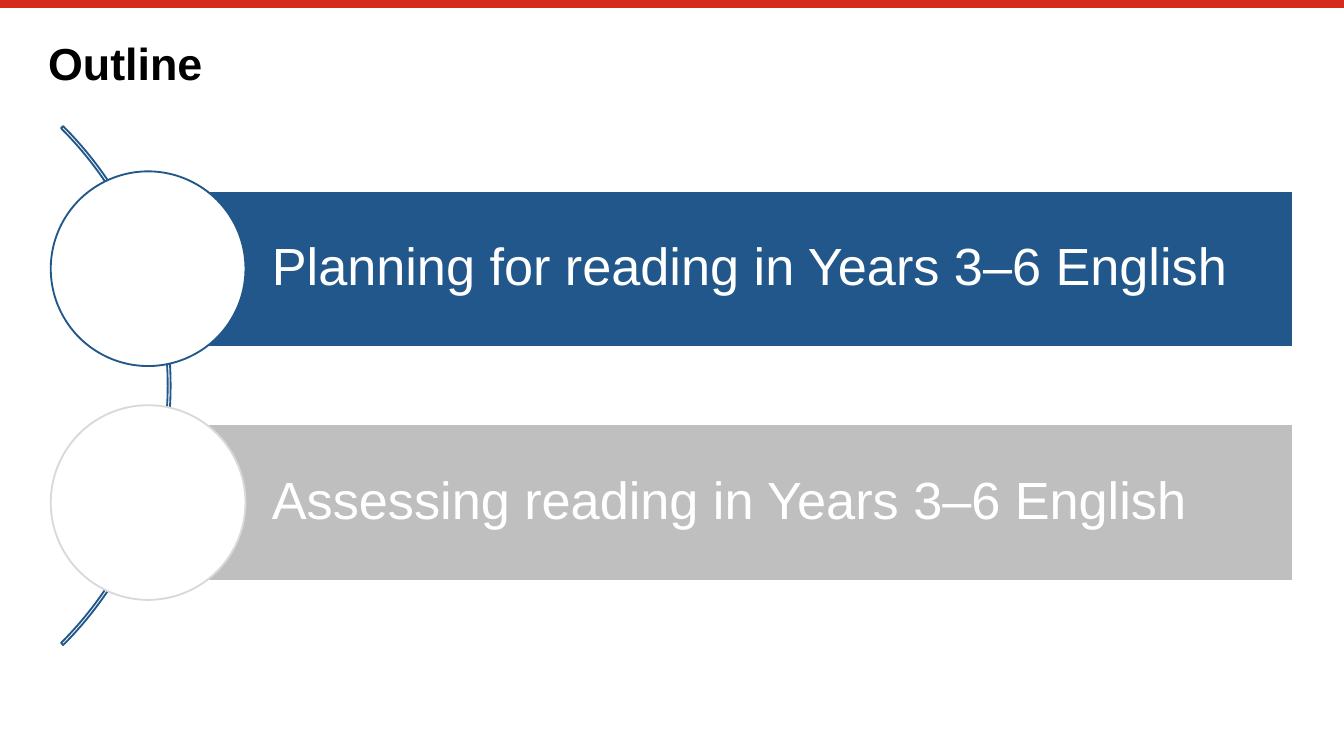
from dataclasses import dataclass

from lxml.etree import SubElement
from pptx import Presentation
from pptx.dml.color import RGBColor
from pptx.enum.shapes import MSO_CONNECTOR, MSO_SHAPE
from pptx.enum.text import MSO_ANCHOR, MSO_AUTO_SIZE, PP_ALIGN
from pptx.oxml.ns import qn
from pptx.util import Cm, Pt

TITLE = "Outline"
# Text, bar colour, circle outline colour
TOPICS = [
    ("Planning for reading in Years 3–6 English", "21578A", "21578A"),
    ("Assessing reading in Years 3–6 English", "BFBFBF", "D9D9D9"),
]


@dataclass(frozen=True)
class Theme:
    font: str = "Arial"
    title_size: int = 24
    topic_size: int = 28
    black: str = "000000"
    white: str = "FFFFFF"
    blue: str = "21578A"
    red: str = "D52B1E"
    outline_width: float = 1
    rule_width: float = 4.2


THEME = Theme()

# Layout in centimetres
SLIDE_WIDTH, SLIDE_HEIGHT = 25.4, 14.29
RULE_Y = 0.08
BAR_LEFT, BAR_WIDTH, BAR_HEIGHT = 2.8, 21.64, 2.95
CIRCLE_SIZE = 3.68
ARC_CENTRE_X, ARC_SIZE = -3.71, 13.87
CENTRE_Y, TOPIC_PITCH = 7.29, 4.42


def add_outlined(slide, kind, centre_x, centre_y, width, height, fill, line):
    """Add a preset shape around its centre; a fill of None leaves it open."""
    shape = slide.shapes.add_shape(
        kind, Cm(centre_x - width / 2), Cm(centre_y - height / 2), Cm(width), Cm(height)
    )
    shape.shadow.inherit = False
    if fill is None:
        shape.fill.background()
    else:
        shape.fill.solid()
        shape.fill.fore_color.rgb = RGBColor.from_string(fill)
    shape.line.color.rgb = RGBColor.from_string(line)
    shape.line.width = Pt(THEME.outline_width)
    return shape


def write_text(shape, text, size, color, bold, margins):
    frame = shape.text_frame
    frame.text = text
    frame.word_wrap = True
    frame.auto_size = MSO_AUTO_SIZE.NONE
    frame.vertical_anchor = MSO_ANCHOR.MIDDLE
    frame.margin_left, frame.margin_top, frame.margin_right, frame.margin_bottom = map(
        Cm, margins
    )
    paragraph = frame.paragraphs[0]
    paragraph.alignment = PP_ALIGN.LEFT
    paragraph.line_spacing = 0.9
    paragraph.font.name = THEME.font
    paragraph.font.size = Pt(size)
    paragraph.font.bold = bold
    paragraph.font.color.rgb = RGBColor.from_string(color)


def add_top_rule(slide):
    rule = slide.shapes.add_connector(
        MSO_CONNECTOR.STRAIGHT, Cm(0), Cm(RULE_Y), Cm(SLIDE_WIDTH), Cm(RULE_Y)
    )
    rule.line.color.rgb = RGBColor.from_string(THEME.red)
    rule.line.width = Pt(THEME.rule_width)
    SubElement(rule._element.spPr, qn("a:effectLst"))


def add_title(slide):
    title = slide.shapes.title
    title.left, title.top, title.width, title.height = map(Cm, (0.91, 0.76, 23.6, 0.99))
    write_text(title, TITLE, THEME.title_size, THEME.black, True, (0, 0, 0, 0))


def add_arc(slide):
    arc = add_outlined(
        slide, MSO_SHAPE.BLOCK_ARC, ARC_CENTRE_X, CENTRE_Y, ARC_SIZE, ARC_SIZE,
        None, THEME.blue,
    )
    # Start and end angles (315° and 45°), then the band's thickness
    for index, value in enumerate((189, 27, 0.004)):
        arc.adjustments[index] = value


def add_topics(slide):
    first_y = CENTRE_Y - TOPIC_PITCH * (len(TOPICS) - 1) / 2
    for index, (text, bar_color, circle_color) in enumerate(TOPICS):
        centre_y = first_y + index * TOPIC_PITCH
        bar = add_outlined(
            slide, MSO_SHAPE.RECTANGLE, BAR_LEFT + BAR_WIDTH / 2, centre_y,
            BAR_WIDTH, BAR_HEIGHT, bar_color, THEME.white,
        )
        write_text(bar, text, THEME.topic_size, THEME.white, False, (2.34, 0.2, 0.2, 0.2))
        add_outlined(
            slide, MSO_SHAPE.OVAL, BAR_LEFT, centre_y, CIRCLE_SIZE, CIRCLE_SIZE,
            THEME.white, circle_color,
        )


def main():
    presentation = Presentation()
    presentation.slide_width = Cm(SLIDE_WIDTH)
    presentation.slide_height = Cm(SLIDE_HEIGHT)
    title_only = presentation.slide_layouts[5]
    slide = presentation.slides.add_slide(title_only)
    add_top_rule(slide)
    add_title(slide)
    add_arc(slide)
    add_topics(slide)
    presentation.save("out.pptx")


if __name__ == "__main__":
    main()
